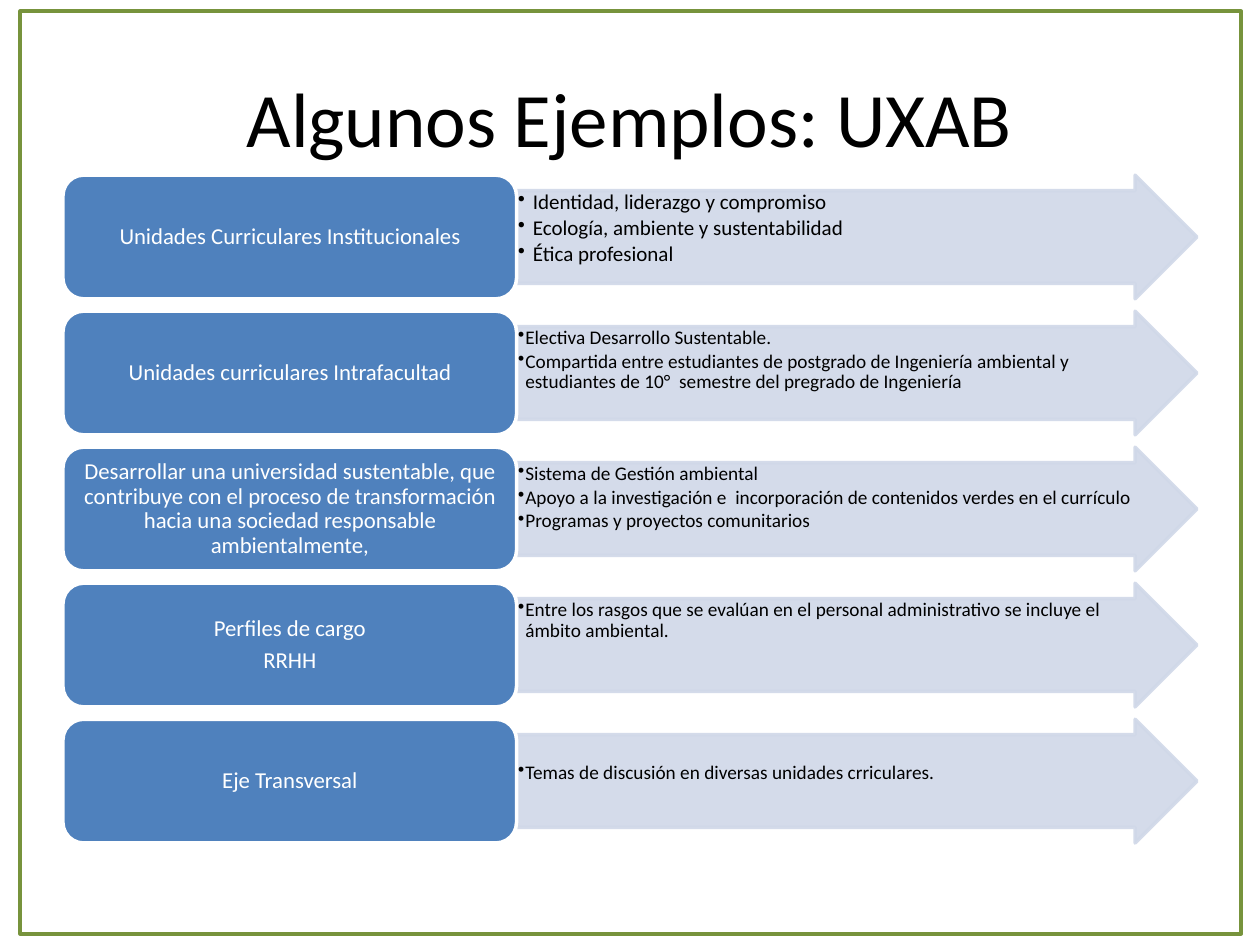
from dataclasses import dataclass

from lxml import etree
from pptx import Presentation
from pptx.dml.color import RGBColor
from pptx.enum.shapes import MSO_SHAPE
from pptx.enum.text import MSO_ANCHOR, PP_ALIGN
from pptx.oxml.ns import qn
from pptx.util import Inches, Pt

RECTANGLE = MSO_SHAPE.RECTANGLE
ROUNDED = MSO_SHAPE.ROUNDED_RECTANGLE
ARROW = MSO_SHAPE.RIGHT_ARROW
TOP, MIDDLE = MSO_ANCHOR.TOP, MSO_ANCHOR.MIDDLE
LEFT, CENTER = PP_ALIGN.LEFT, PP_ALIGN.CENTER


@dataclass(frozen=True)
class Theme:
    font: str = "Calibri"
    ink: str = "000000"
    paper: str = "FFFFFF"
    label: str = "4F81BD"
    arrow: str = "D0D8E8"
    frame: str = "77933C"
    arrow_opacity: int = 90
    title_size: int = 44
    label_size: int = 13
    large_size: int = 12
    detail_size: int = 11


THEME = Theme()
WIDTH, HEIGHT = 10, 7.5

# Row grid: gaps are a tenth of a row
GRID_LEFT, GRID_TOP = 0.05 * WIDTH, 1.39
GRID_WIDTH, GRID_HEIGHT = 0.9 * WIDTH, 5.3
GAP_SHARE = 0.1
LABEL_SHARE = 0.4

# Label paragraphs, bullets, and optional bullet format
ROWS = [
    (["Unidades Curriculares Institucionales"],
     ["Identidad, liderazgo y compromiso",
      "Ecología, ambiente y sustentabilidad",
      "Ética profesional"],
     {"size": THEME.large_size, "indent": 0.12}),
    (["Unidades curriculares Intrafacultad"],
     ["Electiva Desarrollo Sustentable.",
      "Compartida entre estudiantes de postgrado de Ingeniería ambiental y "
      "estudiantes de 10°  semestre del pregrado de Ingeniería"],
     {}),
    (["Desarrollar una universidad sustentable, que contribuye con el proceso "
      "de transformación hacia una sociedad responsable ambientalmente,"],
     ["Sistema de Gestión ambiental",
      "Apoyo a la investigación e  incorporación de contenidos verdes en el currículo",
      "Programas y proyectos comunitarios"],
     {}),
    (["Perfiles de cargo", "RRHH"],
     ["Entre los rasgos que se evalúan en el personal administrativo se "
      "incluye el ámbito ambiental."],
     {}),
    (["Eje Transversal"],
     ["Temas de discusión en diversas unidades crriculares."],
     {"top_inset": 0.22}),
]


def set_opacity(box, percent):
    for color in box._element.spPr.iter(qn("a:srgbClr")):
        etree.SubElement(color, qn("a:alpha"), val=str(percent * 1000))


def add_bullet(para, indent):
    properties = para._p.get_or_add_pPr()
    properties.set("marL", str(Inches(indent)))
    properties.set("indent", str(-Inches(indent)))
    etree.SubElement(properties, qn("a:buChar"), char="•")


def write_text(box, lines, size, color=THEME.ink, align=CENTER, anchor=MIDDLE,
               insets=(0.1, 0.05), top_inset=None, line_spacing=1.0,
               after_share=0, indent=None):
    frame = box.text_frame
    frame.word_wrap = True
    frame.vertical_anchor = anchor
    side, edge = insets
    frame.margin_left = frame.margin_right = Inches(side)
    frame.margin_top = Inches(edge if top_inset is None else top_inset)
    frame.margin_bottom = Inches(edge)
    for index, line in enumerate(lines):
        para = frame.paragraphs[0] if index == 0 else frame.add_paragraph()
        para.alignment = align
        para.line_spacing = line_spacing
        para.space_after = Pt(after_share * size)
        if indent is not None:
            add_bullet(para, indent)
        span = para.add_run()
        span.text = line
        span.font.name = THEME.font
        span.font.size = Pt(size)
        span.font.color.rgb = RGBColor.from_string(color)


def add_box(page, kind, area, line, line_width, fill=None):
    box = page.shapes.add_shape(kind, *map(Inches, area))
    box.shadow.inherit = False
    box.line.color.rgb = RGBColor.from_string(line)
    box.line.width = Pt(line_width)
    if fill is None:
        box.fill.background()
    else:
        box.fill.solid()
        box.fill.fore_color.rgb = RGBColor.from_string(fill)
    return box


def add_title(page, text):
    area = (0.05 * WIDTH, 0.04 * HEIGHT, 0.9 * WIDTH, 1.25)
    box = page.shapes.add_textbox(*map(Inches, area))
    write_text(box, [text], THEME.title_size)


def add_row(page, index, label, details, detail_format):
    row_height = GRID_HEIGHT / (len(ROWS) + (len(ROWS) - 1) * GAP_SHARE)
    top = GRID_TOP + index * row_height * (1 + GAP_SHARE)
    label_width = LABEL_SHARE * GRID_WIDTH

    # Arrow with its bullets
    arrow = add_box(page, ARROW,
                    (GRID_LEFT + label_width, top, GRID_WIDTH - label_width, row_height),
                    THEME.arrow, 2, THEME.arrow)
    set_opacity(arrow, THEME.arrow_opacity)
    arrow.adjustments[0], arrow.adjustments[1] = 0.75, 0.5
    bullet_format = {"size": THEME.detail_size, "indent": 0.06, **detail_format}
    write_text(arrow, details, align=LEFT, anchor=TOP, insets=(0.01, 0.01),
               line_spacing=0.9, after_share=0.15, **bullet_format)

    # Label on the left
    box = add_box(page, ROUNDED, (GRID_LEFT, top, label_width, row_height),
                  THEME.paper, 2, THEME.label)
    write_text(box, label, THEME.label_size, color=THEME.paper,
               insets=(0.05, 0.03), line_spacing=0.9, after_share=0.35)


def main():
    deck = Presentation()
    deck.slide_width, deck.slide_height = Inches(WIDTH), Inches(HEIGHT)
    page = deck.slides.add_slide(deck.slide_layouts[6])

    add_title(page, "Algunos Ejemplos: UXAB")
    for index, row in enumerate(ROWS):
        add_row(page, index, *row)

    # Frame around the page
    add_box(page, RECTANGLE, (0.16, 0.09, 9.69, 7.32), THEME.frame, 2.25)

    deck.save("out.pptx")


if __name__ == "__main__":
    main()
